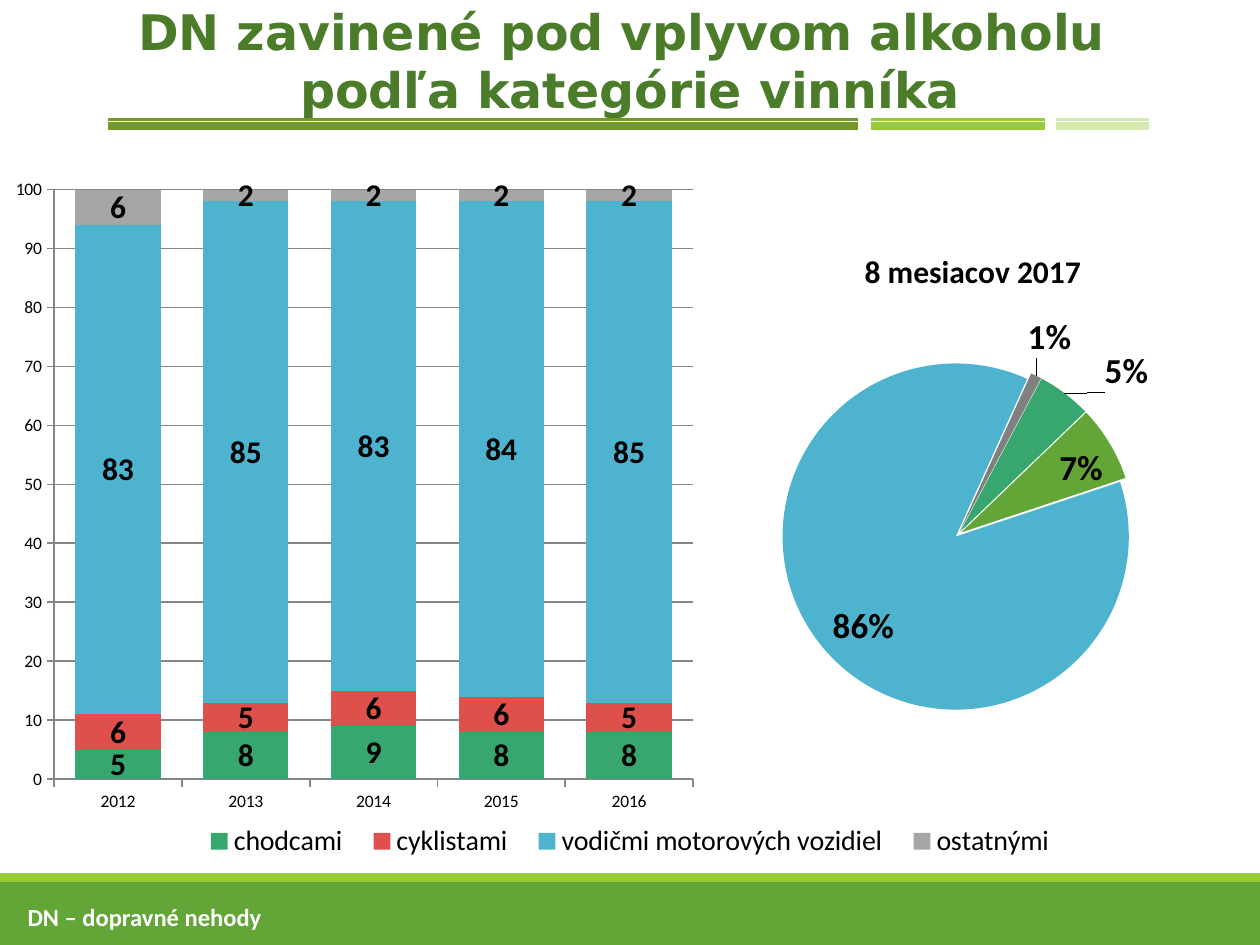
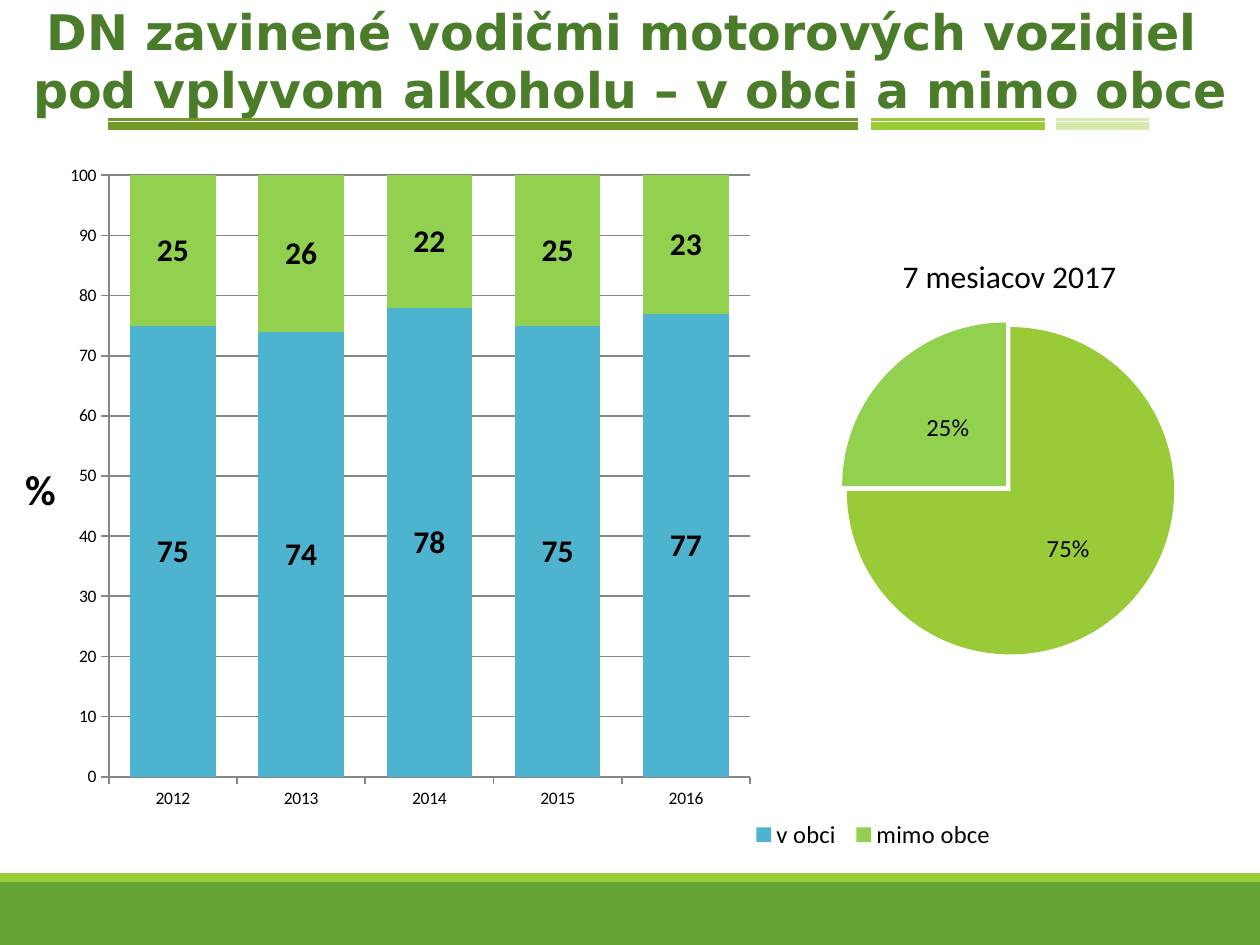
import pptx
import pptx.chart.data
import pptx.dml.color
import pptx.enum.chart
import pptx.enum.shapes
import pptx.enum.text
import pptx.oxml
import pptx.oxml.ns
import pptx.util
from pptx.util import Inches

RGBColor = pptx.dml.color.RGBColor
qn = pptx.oxml.ns.qn
Kind = pptx.enum.chart.XL_CHART_TYPE
Spot = pptx.enum.chart.XL_LABEL_POSITION

BLACK = RGBColor(0x00, 0x00, 0x00)
WHITE = RGBColor(0xFF, 0xFF, 0xFF)
GREY = RGBColor(0x86, 0x86, 0x86)
DARK = RGBColor(0x4A, 0x7C, 0x29)
GREEN = RGBColor(0x63, 0xA5, 0x37)
LIME = RGBColor(0x99, 0xCB, 0x38)
OLIVE = RGBColor(0x73, 0x9A, 0x28)
PALE = RGBColor(0xD6, 0xEA, 0xAF)
LEAF = RGBColor(0x92, 0xD0, 0x50)
TEAL = RGBColor(0x37, 0xA7, 0x6F)
RED = RGBColor(0xDF, 0x50, 0x4D)
BLUE = RGBColor(0x4E, 0xB3, 0xCF)
SILVER = RGBColor(0xA6, 0xA6, 0xA6)
STONE = RGBColor(0x80, 0x80, 0x80)

YEARS = ["2012", "2013", "2014", "2015", "2016"]
RULES = [(0.86, 6.81, OLIVE), (6.91, 8.29, LIME), (8.38, 9.12, PALE)]


def node(tag, **attrs):
    item = pptx.oxml.parse_xml(f"<c:{tag} {pptx.oxml.ns.nsdecls('c')}/>")
    for name, value in attrs.items():
        item.set(name, str(value))
    return item


def style(font, size, color=BLACK, bold=False, name="Calibri"):
    font.name = name
    font.size = pptx.util.Pt(size)
    font.bold = bold
    font.color.rgb = color


def place(parent, index, x, y, w=None, h=None):
    for old in parent.findall(qn("c:layout")):
        parent.remove(old)
    layout, manual = node("layout"), node("manualLayout")
    layout.append(manual)
    if parent.tag == qn("c:plotArea"):
        manual.append(node("layoutTarget", val="inner"))
    if parent.tag != qn("c:dLbl"):
        manual.append(node("xMode", val="edge"))
        manual.append(node("yMode", val="edge"))
    for tag, value in zip("xywh", (x, y, w, h)):
        if value is not None:
            manual.append(node(tag, val=value))
    parent.insert(index, layout)


def add_text(slide, box, lines, size, color, name="Calibri", center=False):
    frame = slide.shapes.add_textbox(*map(Inches, box)).text_frame
    frame.word_wrap = True
    frame.text = "\n".join(lines)
    for para in frame.paragraphs:
        style(para.font, size, color, True, name)
        if center:
            para.alignment = pptx.enum.text.PP_ALIGN.CENTER


def add_band(slide, top, height, color):
    band = slide.shapes.add_shape(
        pptx.enum.shapes.MSO_SHAPE.RECTANGLE, 0, Inches(top), Inches(10), Inches(height))
    band.shadow.inherit = False
    band.fill.solid()
    band.fill.fore_color.rgb = color
    band.line.fill.background()


def add_rule(slide, left, right, y, color, width):
    rule = slide.shapes.add_connector(
        pptx.enum.shapes.MSO_CONNECTOR.STRAIGHT, *map(Inches, (left, y, right, y)))
    rule.line.color.rgb = color
    rule.line.width = pptx.util.Pt(width)
    rule._element.spPr.append(pptx.oxml.parse_xml(
        f"<a:effectLst {pptx.oxml.ns.nsdecls('a')}/>"))


def add_page(deck, title):
    slide = deck.slides.add_slide(deck.slide_layouts[6])
    add_band(slide, 7, 0.5, GREEN)
    add_band(slide, 6.93, 0.07, LIME)
    add_text(slide, (0, -0.04, 10, 1.04), title, 28, DARK, "DejaVu Sans", True)
    for y, width in ((0.95, 1.5), (1, 4.5)):
        for left, right, color in RULES:
            add_rule(slide, left, right, y, color, width)
    return slide


def add_chart(slide, kind, box, cats, rows, plot):
    data = pptx.chart.data.CategoryChartData()
    data.categories = cats
    for name, values in rows:
        data.add_series(name, values)
    chart = slide.shapes.add_chart(kind, *map(Inches, box), data).chart
    style(chart.font, 10)
    place(chart._chartSpace.chart.plotArea, 0, *plot)
    return chart


def add_stack(slide, box, plot, rows, colors, size, key):
    chart = add_chart(slide, Kind.COLUMN_STACKED, box, YEARS, rows, plot)
    chart.has_title = False
    bars = chart.plots[0]
    bars.gap_width, bars.overlap = 50, 100
    bars.vary_by_categories = False
    for series, color in zip(bars.series, colors):
        series.format.fill.solid()
        series.format.fill.fore_color.rgb = color
        labels = series.data_labels
        labels.show_value = True
        labels.position = Spot.CENTER
        style(labels.font, 18, bold=True)
    scale = chart.value_axis
    scale.minimum_scale, scale.maximum_scale, scale.major_unit = 0, 100, 10
    scale.tick_labels.number_format = "0"
    scale.tick_labels.number_format_is_linked = False
    for line in (scale.format.line, scale.major_gridlines.format.line,
                 chart.category_axis.format.line):
        line.color.rgb = GREY
        line.width = pptx.util.Pt(1)
    chart.has_legend = True
    chart.legend.position = pptx.enum.chart.XL_LEGEND_POSITION.BOTTOM
    chart.legend.include_in_layout = False
    style(chart.legend.font, size)
    place(chart.legend._element, 1, *key)
    return chart


def add_pie(slide, box, plot, title, spot, values, colors, size, bold, spots, start=0):
    cats = [str(i + 1) for i in range(len(values))]
    chart = add_chart(slide, Kind.PIE, box, cats, [("Series 1", values)], plot)
    chart.has_legend = False
    chart.has_title = True
    frame = chart.chart_title.text_frame
    frame.text = title
    style(frame.paragraphs[0].font, 18, bold=bold)
    place(chart.chart_title._element, 1, *spot)
    pie = chart.plots[0]
    pie.vary_by_categories = True
    for old in pie._element.findall(qn("c:firstSliceAng")):
        pie._element.remove(old)
    pie._element.append(node("firstSliceAng", val=start))
    series = pie.series[0]
    labels = series.data_labels
    labels.show_value = True
    labels.number_format = '0"%"'
    labels.number_format_is_linked = False
    style(labels.font, size, bold=bold)
    for i, (color, (where, shift)) in enumerate(zip(colors, spots)):
        point = series.points[i]
        point.format.fill.solid()
        point.format.fill.fore_color.rgb = color
        style(point.data_label.font, size, bold=bold)
        point.data_label.position = where
        item = labels._element.findall(qn("c:dLbl"))[i]
        item.insert(1, node("numFmt", formatCode='0"%"', sourceLinked=0))
        if shift:
            place(item, 1, *shift)
    series._element.find(qn("c:dPt")).addprevious(node("explosion", val=2))


def add_groups(deck):
    slide = add_page(deck, ["DN zavinené pod vplyvom alkoholu ", "podľa kategórie vinníka"])
    rows = [("chodcami", (5, 8, 9, 8, 8)),
            ("cyklistami", (6, 5, 6, 6, 5)),
            ("vodičmi motorových vozidiel", (83, 85, 83, 84, 85)),
            ("ostatnými", (6, 2, 2, 2, 2))]
    add_stack(slide, (0, 1.35, 10, 5.52), (0.043, 0.028, 0.507, 0.848),
              rows, (TEAL, RED, BLUE, SILVER), 16, (0.15, 0.93, 0.7, 0.07))
    spots = [(Spot.OUTSIDE_END, (0.06, 0.01)), (Spot.INSIDE_END, None),
             (Spot.INSIDE_END, None), (Spot.OUTSIDE_END, (-0.02, -0.02))]
    add_pie(slide, (5.32, 1.73, 4.68, 4.09), (0.189, 0.271, 0.599, 0.686),
            "8 mesiacov 2017", (0.32, 0.05), (5, 7, 86, 1),
            (TEAL, GREEN, BLUE, STONE), 20, True, spots, 28)
    add_text(slide, (0.12, 7.11, 2.92, 0.34), ["DN – dopravné nehody"], 14, WHITE)


def add_places(deck):
    slide = add_page(deck, ["DN zavinené vodičmi motorových vozidiel ",
                            "pod vplyvom alkoholu – v obci a mimo obce"])
    add_pie(slide, (5.81, 1.89, 4.51, 4.09), (0.192, 0.162, 0.588, 0.648),
            "7 mesiacov 2017", (0.29, 0.02), (75, 25), (LIME, LEAF), 14, False,
            [(Spot.CENTER, None)] * 2)
    rows = [("v obci", (75, 74, 78, 75, 77)), ("mimo obce", (25, 26, 22, 25, 23))]
    chart = add_stack(slide, (0.14, 1.24, 9.77, 5.61), (0.074, 0.027, 0.521, 0.851),
                      rows, (BLUE, LEAF), 14, (0.59, 0.93, 0.21, 0.06))
    title = chart.value_axis.axis_title
    title.text_frame.text = "%"
    style(title.text_frame.paragraphs[0].font, 24, bold=True)
    title.text_frame._txBody.bodyPr.set("rot", "0")
    place(title._element, 1, 0, 0.42)


def main():
    deck = pptx.Presentation()
    deck.slide_width, deck.slide_height = Inches(10), Inches(7.5)
    add_groups(deck)
    add_places(deck)
    deck.save("out.pptx")


if __name__ == "__main__":
    main()
